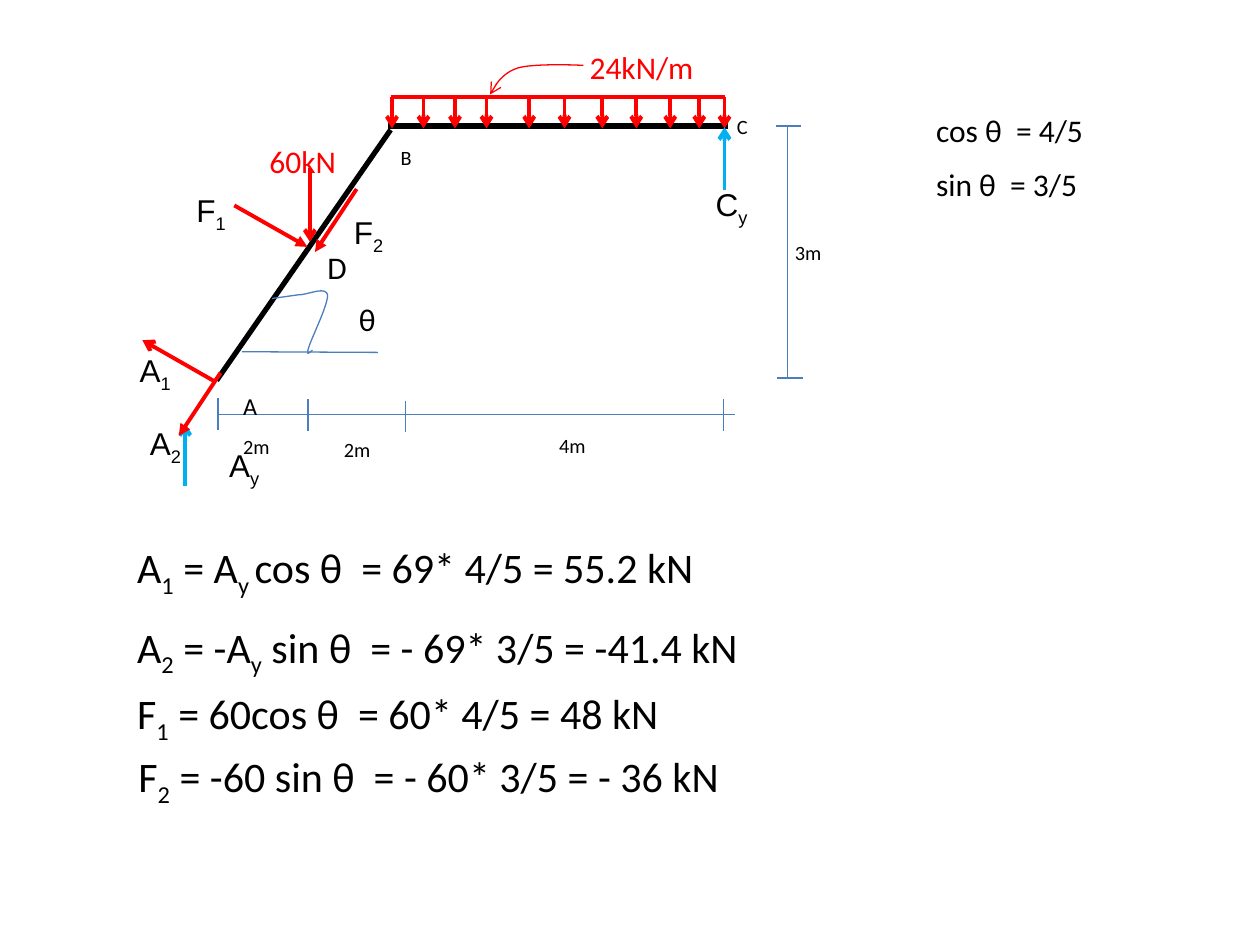
from lxml import etree
from pptx import Presentation
from pptx.dml.color import RGBColor
from pptx.enum.shapes import MSO_CONNECTOR
from pptx.enum.text import MSO_AUTO_SIZE
from pptx.oxml.ns import qn
from pptx.util import Pt

STRAIGHT = MSO_CONNECTOR.STRAIGHT
FIT_TEXT = MSO_AUTO_SIZE.SHAPE_TO_FIT_TEXT
COLORS = {"black": "000000", "red": "FF0000", "blue": "4B7EBC", "cyan": "00B0F0"}


def bezier_points(start, curves, steps=12):
    points = [start]
    for control_1, control_2, end in curves:
        origin = points[-1]
        for step in range(1, steps + 1):
            t = step / steps
            weights = ((1 - t) ** 3, 3 * t * (1 - t) ** 2, 3 * t * t * (1 - t), t ** 3)
            corners = (origin, control_1, control_2, end)
            points.append(tuple(sum(w * corner[axis] for w, corner in zip(weights, corners))
                                for axis in (0, 1)))
    return points


class Diagram:
    def __init__(self, slide):
        self.slide = slide

    def style_line(self, shape, color, width, arrow):
        shape.line.color.rgb = RGBColor.from_string(COLORS[color])
        shape.line.width = Pt(width)
        if arrow:
            line = shape._element.spPr.find(qn("a:ln"))
            etree.SubElement(line, qn("a:tailEnd"), type=arrow)

    def line(self, start, end, color="blue", width=0.75, arrow=None):
        connector = self.slide.shapes.add_connector(
            STRAIGHT, *(Pt(value) for value in (*start, *end)))
        self.style_line(connector, color, width, arrow)
        etree.SubElement(connector._element.spPr, qn("a:effectLst"))

    def force(self, start, end, color="red", arrow="arrow"):
        self.line(start, end, color, 2.25, arrow)

    def curve(self, start, curves, color, arrow=None):
        points = [(Pt(x), Pt(y)) for x, y in bezier_points(start, curves)]
        builder = self.slide.shapes.build_freeform(*points[0])
        builder.add_line_segments(points[1:], close=False)
        shape = builder.convert_to_shape()
        shape.fill.background()
        shape.shadow.inherit = False
        self.style_line(shape, color, 0.75, arrow)

    def text(self, left, top, width, pieces, size=18, font="Calibri", color="black"):
        box = self.slide.shapes.add_textbox(Pt(left), Pt(top), Pt(width), Pt(size * 1.2 + 7.2))
        frame = box.text_frame
        frame.word_wrap = True
        frame.auto_size = FIT_TEXT
        paragraph = frame.paragraphs[0]
        paragraph.font.size = Pt(size)
        paragraph.font.name = font
        paragraph.font.color.rgb = RGBColor.from_string(COLORS[color])
        for index, piece in enumerate(pieces):
            if piece:
                run = paragraph.add_run()
                run.text = piece
                if index % 2:
                    run._r.get_or_add_rPr().set("baseline", "-25000")

    def lowered(self, left, top, width, text, size=20):
        self.text(left, top, width, ["", text], size)


def draw_beam(diagram):
    diagram.line((221.8, 72), (416.2, 72), "black", 3)
    diagram.line((223.2, 74.2), (123.8, 217.4), "black", 3)
    diagram.force((223.2, 55.4), (414, 55.4), arrow=None)
    for x in (224, 242, 260, 278, 302.4, 322.6, 344.2, 363.6, 383, 399.6, 414):
        diagram.force((x, 55.4), (x, 73.4))
    diagram.curve((333.4, 37.4), [((333.4, 37.4), (305.3, 36), (295.9, 38.9)),
                                  ((287.3, 41.8), (283.7, 47.5), (280.1, 54))], "red", "arrow")


def draw_dimensions(diagram):
    diagram.line((124.6, 236.9), (419.8, 236.9))
    for x, top in ((124.6, 227.5), (176, 228.2), (231.8, 229), (413.6, 228.2)):
        diagram.line((x, top), (x, top + 18))
    diagram.line((450, 72), (450, 216))
    for left, y in ((443.5, 72), (444.2, 216)):
        diagram.line((left, y), (left + 14.4, y))
    diagram.line((138.2, 201), (216, 201.4))
    diagram.curve((155.5, 170.6), [((160.6, 169.9), (165.6, 169.2), (170.6, 168.5)),
                                   ((176.4, 168.5), (185.8, 163.4), (187.2, 168.5)),
                                   ((187.9, 173.5), (177.8, 193.7), (176.4, 198.7)),
                                   ((175, 203.8), (176.4, 201.6), (178.6, 200.2))], "blue")


def draw_forces(diagram):
    diagram.force((177.1, 95.8), (177.1, 138.2))
    diagram.force((123.1, 218.2), (81.4, 194.4))
    for x, bottom in ((105.8, 277.9), (414, 108.7)):
        diagram.force((x, bottom), (x, bottom - 36), "cyan")
    for start, end in (((126, 213.1), (102.2, 249.1)), ((133.9, 117.4), (175.7, 141.1)),
                       ((203.8, 108), (180, 144))):
        diagram.force(start, end, arrow="triangle")


def add_labels(diagram):
    diagram.lowered(131.8, 203.8, 18, "A", 24)
    for left, top, width, text in (
            (221.8, 66.2, 18, "B"), (414, 48.2, 18, "C"), (312.5, 230.4, 36, "4m"),
            (447.1, 120.2, 48.2, "3m"), (131.8, 231.1, 48.2, "2m"), (189.4, 232.6, 38.9, "2m")):
        diagram.lowered(left, top, width, text)
    for left, top, letter, subscript in (
            (123.8, 251.3, "A", "y"), (401.8, 102.2, "C", "y"), (72.7, 197.3, "A", "1"),
            (78.5, 239, "A", "2"), (105.1, 105.8, "F", "1"), (195.1, 118.1, "F", "2")):
        diagram.text(left, top, 41.8, [letter, subscript], font="Arial")
    diagram.text(329.8, 23.8, 77.8, ["24kN/m"], color="red")
    diagram.text(146.9, 77.8, 59.8, ["60kN"], color="red")
    diagram.text(180, 138.2, 30.2, ["D"])
    diagram.text(198, 167.8, 23.8, ["θ"])
    diagram.text(527.8, 59.8, 102.2, ["cos θ  = 4/5"])
    diagram.text(527.8, 90.7, 102.2, ["sin θ  = 3/5"])


def add_equations(diagram):
    for left, top, pieces in (
            (71.3, 306, ["A", "1", " = A", "y ", "cos θ  = 69* 4/5 = 55.2 kN"]),
            (71.3, 351.4, ["A", "2", " = -A", "y", " sin θ  = - 69* 3/5 = -41.4 kN"]),
            (71.3, 389.5, ["F", "1", " = 60cos θ  = 60* 4/5 = 48 kN"]),
            (72, 425.5, ["F", "2", " = -60 sin θ  = - 60* 3/5 = - 36 kN"])):
        diagram.text(left, top, 384, pieces, 24)


def main():
    presentation = Presentation()
    presentation.slide_width = Pt(720)
    presentation.slide_height = Pt(540)
    diagram = Diagram(presentation.slides.add_slide(presentation.slide_layouts[6]))
    for draw in (draw_beam, draw_dimensions, draw_forces, add_labels, add_equations):
        draw(diagram)
    presentation.save("out.pptx")


if __name__ == "__main__":
    main()
